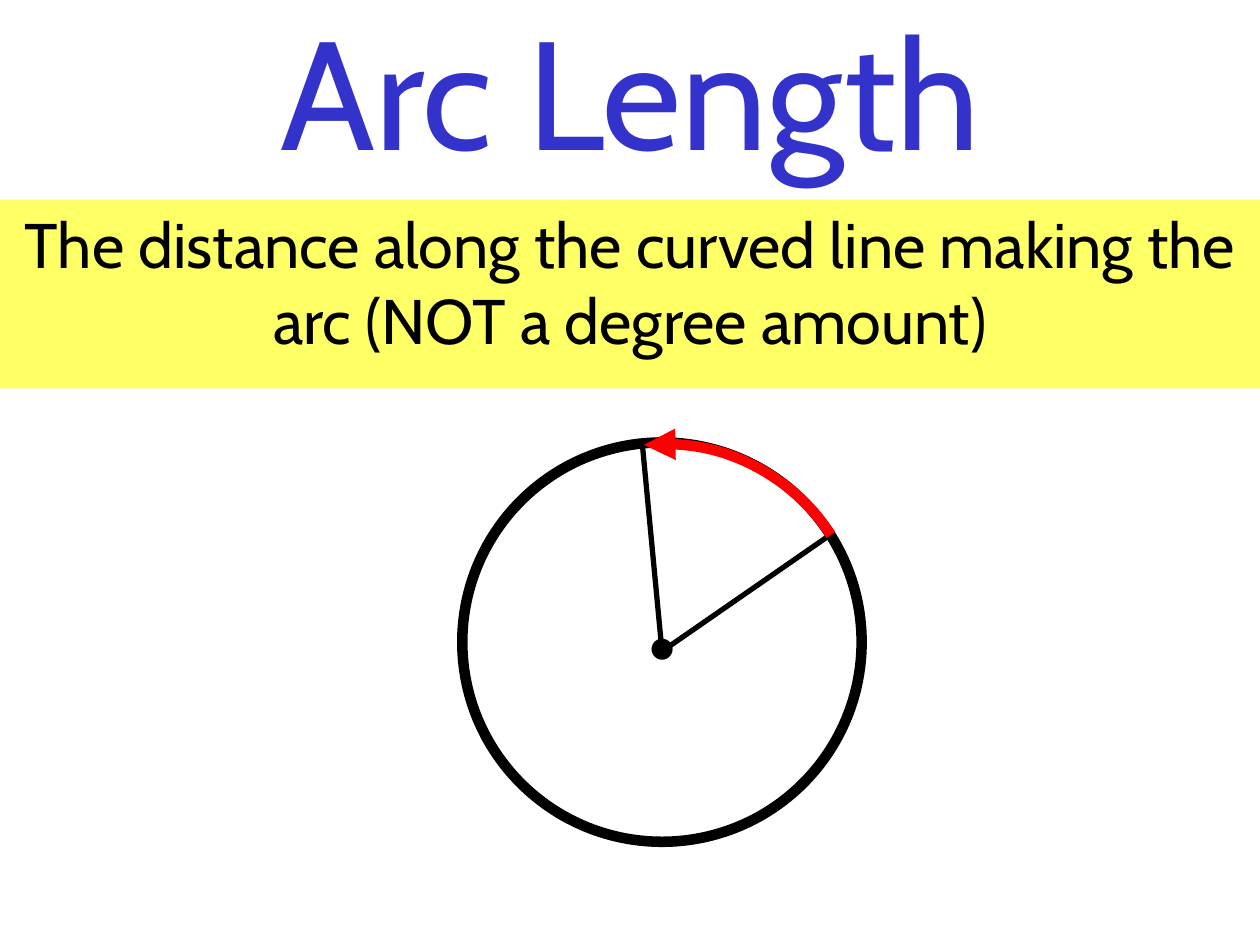
from lxml import etree
from pptx import Presentation
from pptx.dml.color import RGBColor
from pptx.enum.shapes import MSO_CONNECTOR, MSO_SHAPE
from pptx.enum.text import MSO_ANCHOR, MSO_AUTO_SIZE, PP_ALIGN
from pptx.oxml.ns import qn
from pptx.util import Cm, Pt

BLUE = RGBColor(0x33, 0x33, 0xCC)
YELLOW = RGBColor(0xFF, 0xFF, 0x66)
BLACK = RGBColor(0, 0, 0)
RED = RGBColor(0xFF, 0, 0)

ELLIPSE, ARC = MSO_SHAPE.OVAL, MSO_SHAPE.ARC
STRAIGHT = MSO_CONNECTOR.STRAIGHT
TOP, MIDDLE = MSO_ANCHOR.TOP, MSO_ANCHOR.MIDDLE
LEFT, CENTER = PP_ALIGN.LEFT, PP_ALIGN.CENTER
FIT_SHAPE = MSO_AUTO_SIZE.SHAPE_TO_FIT_TEXT


def add_text(slide, text, box, *, size, color=BLACK, font="Cabin", align=CENTER,
             anchor=TOP, fill=None, wrap=True):
    """Place a text box; box is left, top, width, height in cm."""
    shape = slide.shapes.add_textbox(*map(Cm, box))
    if fill is not None:
        shape.fill.solid()
        shape.fill.fore_color.rgb = fill
    frame = shape.text_frame
    frame.word_wrap = wrap
    frame.vertical_anchor = anchor
    paragraph = frame.paragraphs[0]
    paragraph.alignment = align
    run = paragraph.add_run()
    run.text = text
    run.font.name = font
    run.font.size = Pt(size)
    run.font.color.rgb = color
    return shape


def add_outline(slide, kind, box, color):
    """Place an unfilled shape with a thick outline."""
    shape = slide.shapes.add_shape(kind, *map(Cm, box))
    shape.shadow.inherit = False
    shape.fill.background()
    shape.line.color.rgb = color
    shape.line.width = Pt(6)
    return shape


def add_radius(slide, start, end):
    connector = slide.shapes.add_connector(STRAIGHT, *map(Cm, start + end))
    connector.line.color.rgb = BLACK
    connector.line.width = Pt(3)
    etree.SubElement(connector._element.spPr, qn("a:effectLst"))


def add_heading(slide, left, top, width):
    add_text(slide, "Arc Length", (left + 1.9, top + 0.2, width - 3.8, 3.18),
             size=88, color=BLUE, anchor=MIDDLE)
    add_text(slide, "The distance along the curved line making the arc (NOT a degree amount)",
             (left, top + 4.02, width, 3.81), size=36, fill=YELLOW)


def add_circle_diagram(slide, left, top, diameter):
    # Circle and the two radii bounding the arc
    add_outline(slide, ELLIPSE, (left, top, diameter, diameter), BLACK)
    hub = (left + diameter / 2, top + 4.21)
    for end in ((left + 3.63, top + 0.05), (left + 7.39, top + 1.88)):
        add_radius(slide, hub, end)

    # Red arc; its angles run clockwise from the right, in units of 1/0.6 degree
    arc = add_outline(slide, ARC, (left + 0.03, top + 0.03, diameter, diameter), RED)
    for index, degrees in enumerate((264.4, 327)):
        arc.adjustments[index] = degrees * 0.6
    etree.SubElement(arc.line._get_or_add_ln(), qn("a:headEnd"), type="triangle")

    # Centre point
    point = add_text(slide, "●", (left + 3.48, top + 3.35, 1.24, 1.45), size=28,
                     font="Times New Roman", align=LEFT, wrap=False)
    point.text_frame.auto_size = FIT_SHAPE


def main():
    presentation = Presentation()
    presentation.slide_width, presentation.slide_height = Cm(25.4), Cm(19.05)
    slide = presentation.slides.add_slide(presentation.slide_layouts[6])
    add_heading(slide, 0, 0, 25.4)
    add_circle_diagram(slide, 9.32, 8.92, 8.05)
    presentation.save("out.pptx")


if __name__ == "__main__":
    main()
